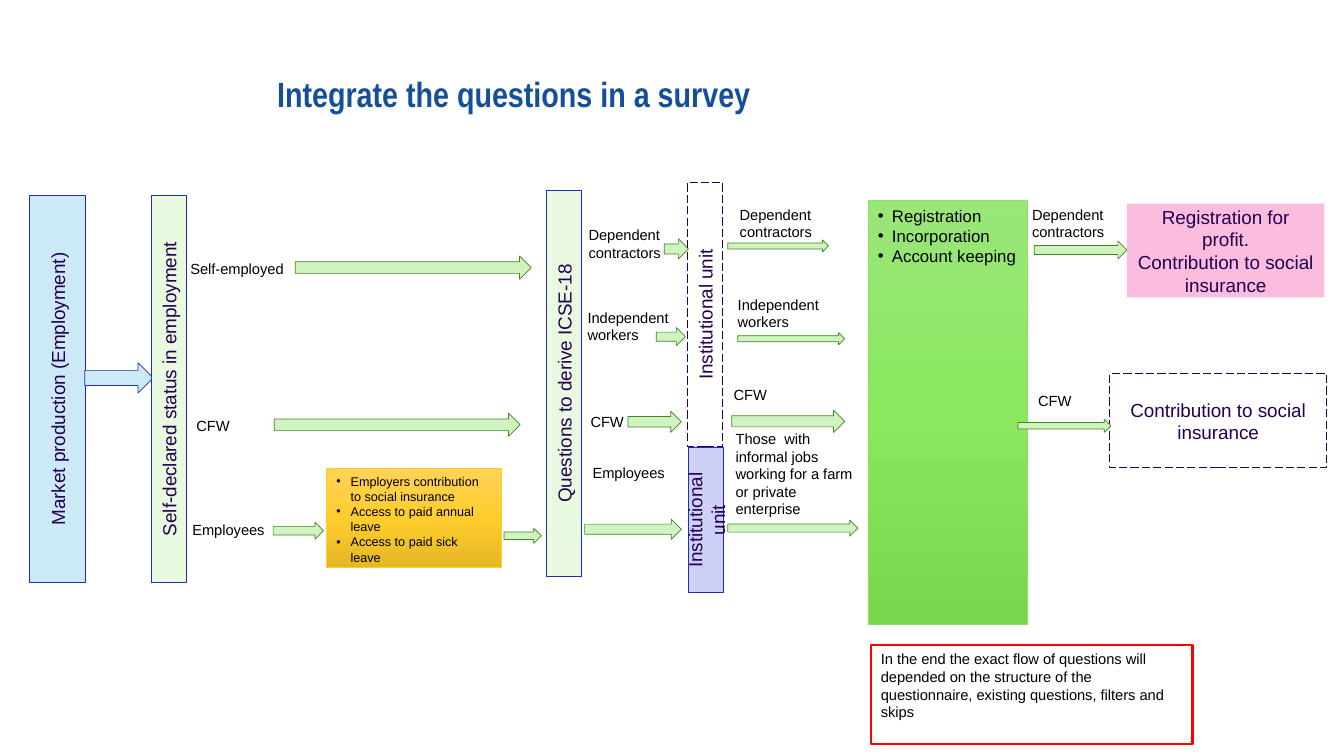
from collections import namedtuple
from copy import deepcopy

from lxml.etree import SubElement
from pptx import Presentation
from pptx.dml.color import RGBColor
from pptx.enum.dml import MSO_LINE
from pptx.enum.shapes import MSO_SHAPE as Preset
from pptx.enum.text import MSO_ANCHOR as Anchor, MSO_AUTO_SIZE as AutoSize, PP_ALIGN as Align
from pptx.oxml.ns import qn
from pptx.util import Inches, Pt

CELL = Inches(0.1)
COLUMNS, ROWS = 133.33, 75
BAR_WIDTH = 3.5
LABEL_WIDTH, LINE_HEIGHT, TWO_LINES = 12.9, 2.8, 4.5
COLORS = {
    "title": "154F98", "ink": "230050", "black": "000000", "blue line": "1E2DBE",
    "sky": "CCE9F8", "mint": "E8F9E0", "lilac": "CDD1F7", "pink": "FBBDDE",
    "arrow": "D1F3C1", "arrow line": "3D881A", "red": "FF0000",
    "gold line": "FFCD2D", "green line": "8CE164",
}
GRADIENTS = {
    "gold": ("FFD257", "FFCD2D", "E5B726"),
    "green": ("99E679", "8AE75E", "78D54C"),
}


class Box(namedtuple("Box", "left top width height")):
    def inner(self, left, top, width, height):
        return Box(self.left + left, self.top + top, width, height)

    def lengths(self):
        return [round(value * CELL) for value in self]


def color(name):
    return RGBColor.from_string(COLORS[name])


def write_text(shape, text, size=10.5, ink="black", font="Arial", bold=False,
               align=Align.LEFT, anchor=Anchor.MIDDLE, vertical=False,
               bullet=False, spacing=None, inset=None):
    frame = shape.text_frame
    frame.word_wrap = True
    frame.auto_size = AutoSize.NONE
    frame.vertical_anchor = anchor
    if inset is not None:
        frame.margin_left = frame.margin_right = Inches(inset)
        frame.margin_top = frame.margin_bottom = Inches(inset)
    if vertical:
        frame._txBody.bodyPr.set("vert", "vert270")
    frame.text = text
    for paragraph in frame.paragraphs:
        paragraph.alignment = align
        paragraph.line_spacing = spacing
        if bullet:
            properties = paragraph._p.get_or_add_pPr()
            properties.set("marL", str(Inches(0.14)))
            properties.set("indent", str(-Inches(0.14)))
            SubElement(properties, qn("a:buFont")).set("typeface", "Arial")
            SubElement(properties, qn("a:buChar")).set("char", "•")
        for run in paragraph.runs:
            run.font.size = Pt(size)
            run.font.name = font
            run.font.bold = bold
            run.font.color.rgb = color(ink)


def fill_gradient(shape, name):
    shape.fill.gradient()
    shape.fill.gradient_angle = 270
    stop_list = shape._element.spPr.find(qn("a:gradFill")).find(qn("a:gsLst"))
    stop_list.insert(1, deepcopy(stop_list[0]))
    for index, (stop, value) in enumerate(zip(shape.fill.gradient_stops, GRADIENTS[name])):
        stop.position = index / 2
        stop.color.rgb = RGBColor.from_string(value)


def add_block(slide, box, preset=Preset.RECTANGLE, fill=None, line=None, weight=0.5, dashed=False):
    shape = slide.shapes.add_shape(preset, *box.lengths())
    shape.shadow.inherit = False
    if fill in GRADIENTS:
        fill_gradient(shape, fill)
    elif fill:
        shape.fill.solid()
        shape.fill.fore_color.rgb = color(fill)
    else:
        shape.fill.background()
    if line:
        shape.line.color.rgb = color(line)
        shape.line.width = Pt(weight)
    else:
        shape.line.fill.background()
    if dashed:
        shape.line.dash_style = MSO_LINE.LONG_DASH
    return shape


def add_caption(slide, box, text, vertical=False, **style):
    shape = add_block(slide, box, **style)
    write_text(shape, text, size=13.5, ink="ink", align=Align.CENTER, vertical=vertical)


def add_arrow(slide, box, fill="arrow", line="arrow line"):
    add_block(slide, box, Preset.RIGHT_ARROW, fill, line)


def add_label(slide, box, text):
    write_text(slide.shapes.add_textbox(*box.lengths()), text)


def add_flows(slide, box, labels, arrows):
    for left, top, height, text in labels:
        add_label(slide, box.inner(left, top, LABEL_WIDTH, height), text)
    for arrow in arrows:
        add_arrow(slide, box.inner(*arrow))


def place_title(slide, box):
    title = slide.shapes.title
    title.left, title.top, title.width, title.height = box.lengths()
    write_text(title, "Integrate the questions in a survey", size=25, ink="title",
               font="Arial Narrow", bold=True, anchor=Anchor.TOP, spacing=0.9, inset=0)


def place_market(slide, box):
    add_caption(slide, box, "Market production (Employment)", vertical=True,
                fill="sky", line="blue line")
    add_arrow(slide, box.inner(box.width - 0.1, 16.6, 6.8, 3), "sky", "blue line")


def place_status(slide, box):
    add_caption(slide, box.inner(0, 0, BAR_WIDTH, box.height),
                "Self-declared status in employment", vertical=True,
                fill="mint", line="blue line")
    benefits = add_block(slide, box.inner(17.4, 27.1, 17.3, 9.8), fill="gold", line="gold line")
    write_text(benefits, "Employers contribution to social insurance\n"
               "Access to paid annual leave\nAccess to paid sick leave",
               size=9, anchor=Anchor.TOP, bullet=True)
    add_flows(slide, box,
              [(2.9, 5.8, LINE_HEIGHT, "Self-employed"),
               (3.5, 21.4, LINE_HEIGHT, "CFW"),
               (3.1, 31.7, LINE_HEIGHT, "Employees")],
              [(14.3, 6, 23.4, 2.3), (12.2, 21.6, 24.4, 2.3),
               (12.1, 32.4, 5, 1.7), (35, 33, 3.7, 1.5)])


def place_questions(slide, box):
    add_caption(slide, box.inner(0, 0, BAR_WIDTH, box.height), "Questions to derive ICSE-18",
                vertical=True, fill="mint", line="blue line")
    add_flows(slide, box,
              [(3.2, 3, TWO_LINES, "Dependent contractors"),
               (3.1, 11.2, TWO_LINES, "Independent workers"),
               (3.4, 21.5, LINE_HEIGHT, "CFW"),
               (3.6, 26.6, LINE_HEIGHT, "Employees")],
              [(11.7, 4.8, 2.4, 2), (10.9, 13.6, 2.9, 1.8),
               (8.1, 21.9, 5.3, 2.1), (3.8, 32.6, 9.6, 2)])


def place_units(slide, box):
    unit = "Institutional unit"
    add_caption(slide, box.inner(0.1, 26.3, BAR_WIDTH, 14.4), unit, vertical=True,
                fill="lilac", line="blue line")
    add_caption(slide, box.inner(0, 0, BAR_WIDTH, 26.2), unit, vertical=True,
                line="ink", weight=0.75, dashed=True)
    add_label(slide, box.inner(3.8, 24, 14.7, 9.8),
              "Those  with informal jobs working for a farm or private enterprise")
    add_flows(slide, box,
              [(4.2, 1.8, TWO_LINES, "Dependent contractors"),
               (4, 10.7, TWO_LINES, "Independent workers"),
               (3.6, 19.6, LINE_HEIGHT, "CFW")],
              [(4, 5.7, 10, 1.2), (5, 14.9, 10.6, 1.2),
               (4.4, 22.6, 11.2, 2.2), (4, 33.5, 12.9, 1.6)])


def place_registration(slide, box):
    panel = add_block(slide, box, fill="green", line="green line")
    write_text(panel, "Registration\nIncorporation\nAccount keeping",
               size=12, anchor=Anchor.TOP, bullet=True)


def place_outcomes(slide, box):
    add_caption(slide, box.inner(10.8, 0.3, 19.6, 9.3),
                "Registration for profit.\nContribution to social insurance", fill="pink")
    add_caption(slide, box.inner(9.1, 17.2, 21.5, 9.3), "Contribution to social insurance",
                line="ink", weight=0.75, dashed=True)
    add_flows(slide, box,
              [(0.4, 0, TWO_LINES, "Dependent contractors"), (1, 18.4, LINE_HEIGHT, "CFW")],
              [(1.6, 4, 9.2, 1.8), (0, 21.7, 9.2, 1.3)])


def place_note(slide, box):
    note = add_block(slide, box, line="red", weight=1.5)
    write_text(note, "In the end the exact flow of questions will depended on the structure "
               "of the questionnaire, existing questions, filters and skips", anchor=Anchor.TOP)


def main():
    presentation = Presentation()
    presentation.slide_width = round(COLUMNS * CELL)
    presentation.slide_height = ROWS * CELL
    slide = presentation.slides.add_slide(presentation.slide_layouts[5])
    place_title(slide, Box(27.5, 7.7, 86.1, 5.9))
    place_market(slide, Box(2.9, 19.4, 5.6, 38.4))
    place_status(slide, Box(15, 19.4, 38.7, 38.4))
    place_questions(slide, Box(54.2, 18.9, 14.1, 38.3))
    place_units(slide, Box(68.2, 18.1, 16.9, 40.7))
    place_registration(slide, Box(86.1, 19.9, 15.8, 42))
    place_outcomes(slide, Box(101, 19.9, 30.6, 26.5))
    place_note(slide, Box(86.4, 64, 31.9, 9.8))
    presentation.save("out.pptx")


if __name__ == "__main__":
    main()
